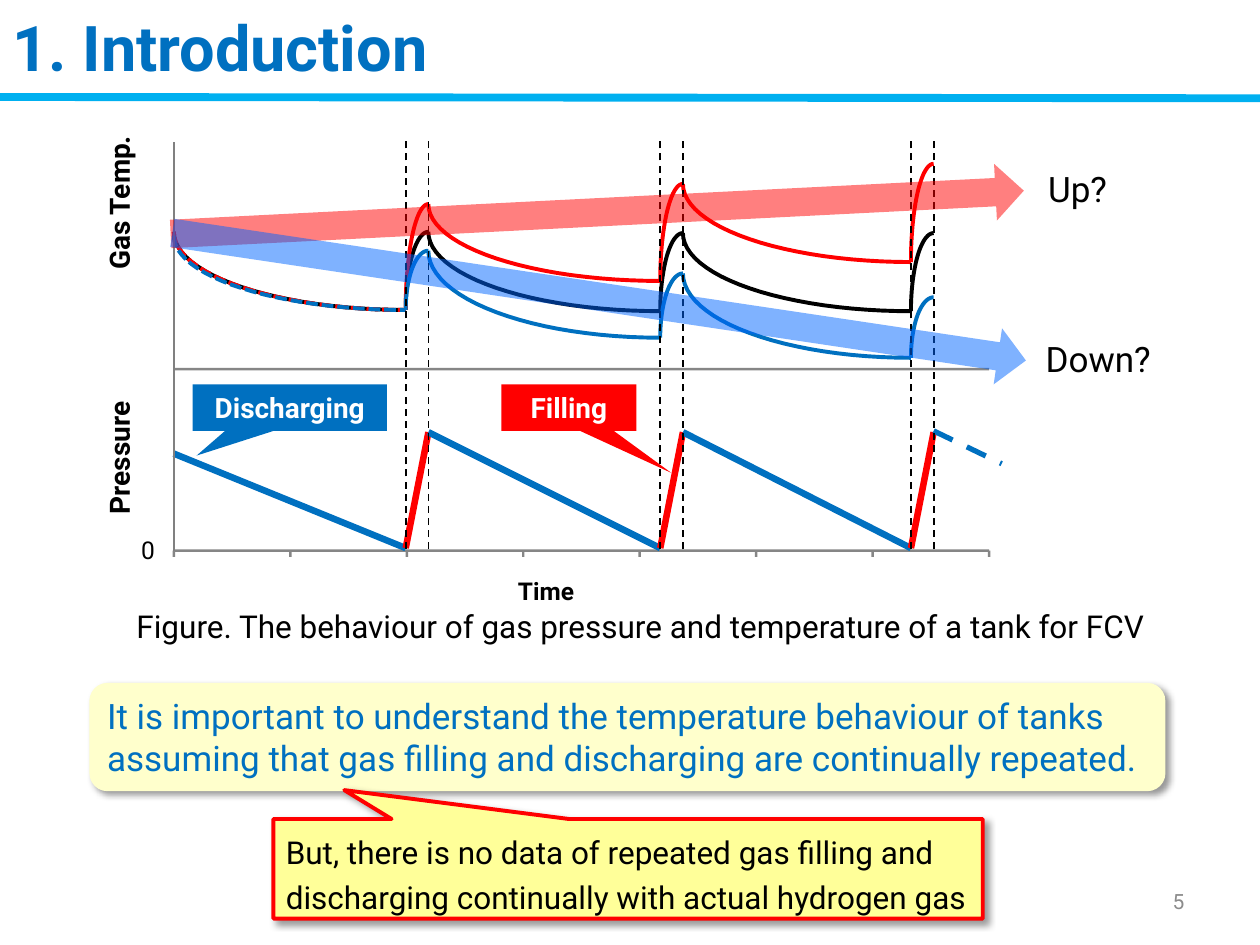
import math
from lxml import etree
from pptx import Presentation
from pptx import util as u
from pptx.dml.color import RGBColor
from pptx.enum import dml, shapes, text
from pptx.oxml import parse_xml
from pptx.oxml.ns import nsdecls, qn

COLORS = {
    "sky": "00B0F0", "blue": "0070C0", "red": "FF0000", "black": "000000",
    "white": "FFFFFF", "grey": "868686", "axis": "808080", "number": "8C8C8C",
    "cream": "FFFFCC", "yellow": "FFFF99", "arrow blue": "0066FF",
}
LEFT, CENTER, RIGHT = text.PP_ALIGN.LEFT, text.PP_ALIGN.CENTER, text.PP_ALIGN.RIGHT
TOP, MIDDLE = text.MSO_ANCHOR.TOP, text.MSO_ANCHOR.MIDDLE
SOLID, DASH, SQUARE = dml.MSO_LINE.SOLID, dml.MSO_LINE.DASH, dml.MSO_LINE.SQUARE_DOT
PRESET = shapes.MSO_SHAPE

presentation = Presentation()
presentation.slide_width, presentation.slide_height = u.Inches(10), u.Inches(7.5)
slide = presentation.slides.add_slide(presentation.slide_layouts[5])


def write_text(shape, content, size, color, bold=False, align=LEFT, anchor=TOP,
               wrap=True, inset=True, spacing=None, tab=None):
    frame = shape.text_frame
    frame.word_wrap, frame.vertical_anchor = wrap, anchor
    frame.auto_size = text.MSO_AUTO_SIZE.NONE
    frame.margin_left = frame.margin_right = u.Inches(0.1 if inset else 0)
    frame.margin_top = frame.margin_bottom = u.Inches(0.05 if inset else 0)
    paragraph = frame.paragraphs[0]
    paragraph.alignment, paragraph.space_before = align, u.Pt(0)
    if spacing:
        paragraph.line_spacing = spacing
    if tab:
        tabs = etree.SubElement(paragraph._p.get_or_add_pPr(), qn("a:tabLst"))
        etree.SubElement(tabs, qn("a:tab"), pos=str(u.Inches(tab)), algn="l")
    run = paragraph.add_run()
    run.text = content
    run.font.name, run.font.size, run.font.bold = "Roboto", u.Pt(size), bold
    run.font.color.rgb = RGBColor.from_string(COLORS[color])


def add_box(preset, place, fill, adjustments=(), shadow=False):
    shape = slide.shapes.add_shape(preset, *map(u.Inches, place))
    shape.fill.solid()
    shape.fill.fore_color.rgb = RGBColor.from_string(COLORS[fill])
    shape.line.fill.background()
    for index, value in enumerate(adjustments):
        shape.adjustments[index] = value
    shape.shadow.inherit = False
    if shadow:
        shape._element.spPr.find(qn("a:effectLst")).append(parse_xml(
            f'<a:outerShdw {nsdecls("a")} blurRad="50800" dist="38100" dir="2700000" algn="tl">'
            '<a:srgbClr val="000000"><a:alpha val="40000"/></a:srgbClr></a:outerShdw>'))
    return shape


# Title
title = slide.shapes.title
title.left, title.top, title.width, title.height = map(u.Inches, (0, 0.01, 7.86, 0.71))
write_text(title, "1. Introduction", 36, "blue", bold=True, anchor=MIDDLE)

# Caption and the two messages
caption = add_box(PRESET.RECTANGLE, (0.91, 4.77, 8.35, 0.4), "white")
write_text(caption, "Figure. The behaviour of gas pressure and temperature of a tank for FCV",
           18, "black", align=CENTER, wrap=False)
message = add_box(PRESET.ROUNDED_RECTANGLE, (0.71, 5.42, 8.54, 0.86), "cream", shadow=True)
write_text(message, "It is important to understand the temperature behaviour of tanks "
           "assuming that gas filling and discharging are continually repeated.", 20, "blue")
remark = add_box(PRESET.RECTANGULAR_CALLOUT, (2.17, 6.5, 5.63, 0.79), "yellow",
                 (-0.4, -0.79), shadow=True)
remark.line.color.rgb = RGBColor.from_string(COLORS["red"])
remark.line.width = u.Pt(2.25)
write_text(remark, "But, there is no data of repeated gas filling and "
           "discharging continually with actual hydrogen gas", 18, "black", spacing=1.2)

# Time axes with ticks on the lower one
PLOT_LEFT, PLOT_WIDTH, TICKS = 1.38, 6.47, 8
for axis_top in (2.92, 4.36):
    add_box(PRESET.RECTANGLE, (PLOT_LEFT, axis_top, PLOT_WIDTH, 0.02), "grey")
for index in range(TICKS):
    tick_x = PLOT_LEFT + index * PLOT_WIDTH / (TICKS - 1)
    add_box(PRESET.RECTANGLE, (tick_x - 0.01, 4.37, 0.02, 0.05), "grey")

# Traces: discharging and filling alternate between these times
times = [PLOT_LEFT, 3.22, 3.4, 5.24, 5.42, 7.23, 7.41]
pressures = [3.6, 4.35, 3.43, 4.35, 3.43, 4.35, 3.43]
temperatures = {
    "black": [1.84, 2.46, 1.84, 2.47, 1.85, 2.47, 1.85],
    "red": [1.84, 2.46, 1.62, 2.23, 1.46, 2.08, 1.3],
    "blue": [1.87, 2.46, 1.99, 2.68, 2.17, 2.84, 2.36],
}
traces = []
for index in range(len(times) - 1):
    points = list(zip(times, pressures))[index:index + 2]
    traces.append((points, "red" if index % 2 else "blue", 3.75, SOLID))
CURVE_STEPS = 24
for color, levels in temperatures.items():
    for index in range(len(times) - 1):
        (x0, x1), (y0, y1) = times[index:index + 2], levels[index:index + 2]
        angles = [step * math.pi / 2 / CURVE_STEPS for step in range(CURVE_STEPS + 1)]
        points = [(x1 - (x1 - x0) * math.cos(angle), y0 + (y1 - y0) * math.sin(angle))
                  for angle in angles]
        dash = SQUARE if index == 0 and color != "black" else SOLID
        traces.append((points, color, 2.25, dash))
for points, color, width, dash in traces:
    corners = [(u.Inches(x), u.Inches(y)) for x, y in points]
    builder = slide.shapes.build_freeform(*corners[0], scale=1.0)
    builder.add_line_segments(corners[1:], close=False)
    trace = builder.convert_to_shape()
    trace.fill.background()
    trace.line.color.rgb = RGBColor.from_string(COLORS[color])
    trace.line.width, trace.line.dash_style = u.Pt(width), dash
    trace.shadow.inherit = False

# Callouts naming the two phases
for name, place, fill, tip in [
    ("Discharging", (1.53, 3.05, 1.54, 0.37), "blue", (-0.48, 1.03)),
    ("Filling", (3.98, 3.05, 1.07, 0.37), "red", (0.76, 1.4)),
]:
    callout = add_box(PRESET.RECTANGULAR_CALLOUT, place, fill, tip)
    write_text(callout, name, 16, "white", bold=True, align=CENTER, anchor=MIDDLE)

# Header rule, vertical axis, phase guides and the next discharge
lines = [((0, 0.77), (10, 0.78), "sky", 4.5, SOLID),
         ((PLOT_LEFT, 4.37), (PLOT_LEFT, 1.13), "axis", 1.5, SOLID),
         ((7.41, 3.42), (7.95, 3.68), "blue", 3, DASH)]
lines += [((x, 4.36), (x, 1.12), "black", 1, DASH) for x in times[1:]]
for start, end, color, width, dash in lines:
    connector = slide.shapes.add_connector(shapes.MSO_CONNECTOR.STRAIGHT,
                                           *map(u.Inches, start + end))
    connector.line.color.rgb = RGBColor.from_string(COLORS[color])
    connector.line.width, connector.line.dash_style = u.Pt(width), dash
    etree.SubElement(connector._element.spPr, qn("a:effectLst"))

# Half-transparent trend arrows
for place, fill, rotation in [((1.35, 1.46, 6.78, 0.45), "red", 357.1),
                              ((1.33, 2.13, 6.85, 0.45), "arrow blue", 8.5)]:
    arrow = add_box(PRESET.RIGHT_ARROW, place, fill)
    arrow.rotation = rotation
    fill_color = arrow._element.spPr.find(qn("a:solidFill")).find(qn("a:srgbClr"))
    etree.SubElement(fill_color, qn("a:alpha"), val="50000")

# Labels
for content, place, rotation, style in [
    ("0", (1.12, 4.25, 0.11, 0.24), 0,
     dict(size=14, color="black", wrap=False, inset=False)),
    ("Pressure\tGas Temp.", (-0.59, 2.41, 3.07, 0.27), 270,
     dict(size=16, color="black", bold=True, inset=False, tab=1.94)),
    ("Time", (4.11, 4.57, 0.49, 0.24), 0,
     dict(size=14, color="black", bold=True, wrap=False, inset=False)),
    ("Up?", (8.22, 1.28, 0.67, 0.44), 0, dict(size=20, color="black", wrap=False)),
    ("Down?", (8.2, 2.63, 1.04, 0.44), 0, dict(size=20, color="black", wrap=False)),
    ("5", (7.17, 6.95, 2.33, 0.4), 0,
     dict(size=12, color="number", align=RIGHT, anchor=MIDDLE)),
]:
    label = slide.shapes.add_textbox(*map(u.Inches, place))
    label.rotation = rotation
    write_text(label, content, **style)

presentation.save("out.pptx")
